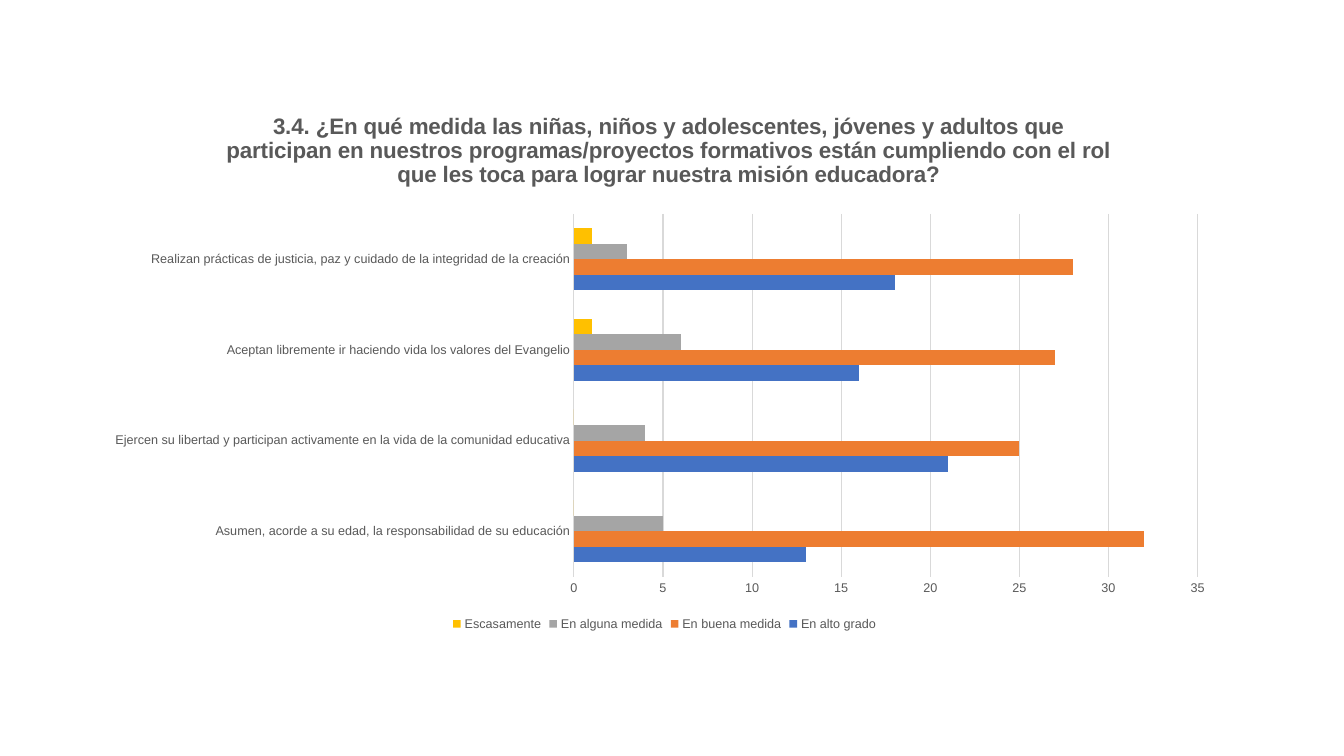
from dataclasses import dataclass

from lxml.etree import SubElement
from pptx import Presentation
from pptx.chart.chart import Chart
from pptx.chart.data import CategoryChartData
from pptx.dml.color import RGBColor
from pptx.enum.chart import XL_CHART_TYPE, XL_LEGEND_POSITION, XL_TICK_MARK
from pptx.oxml.ns import qn
from pptx.text.text import Font, TextFrame
from pptx.util import Cm, Pt

COLORS = {
    "text": "595959",
    "line": "D9D9D9",
    "blue": "4472C4",
    "orange": "ED7D31",
    "gray": "A5A5A5",
    "yellow": "FFC000",
}


@dataclass
class Answer:
    name: str
    values: tuple[int, ...]
    color: str


TITLE = (
    "3.4. ¿En qué medida las niñas, niños y adolescentes, jóvenes y adultos que "
    "participan en nuestros programas/proyectos formativos están cumpliendo con el rol "
    "que les toca para lograr nuestra misión educadora?"
)
CATEGORIES = [
    "Asumen, acorde a su edad, la responsabilidad de su educación",
    "Ejercen su libertad y participan activamente en la vida de la comunidad educativa",
    "Aceptan libremente ir haciendo vida los valores del Evangelio",
    "Realizan prácticas de justicia, paz y cuidado de la integridad de la creación",
]
ANSWERS = [
    Answer("En alto grado", (13, 21, 16, 18), "blue"),
    Answer("En buena medida", (32, 25, 27, 28), "orange"),
    Answer("En alguna medida", (5, 4, 6, 3), "gray"),
    Answer("Escasamente", (0, 0, 1, 1), "yellow"),
]


def rgb(name: str) -> RGBColor:
    return RGBColor.from_string(COLORS[name])


def format_font(font: Font, size: float = 9, bold: bool = False, color: str = "text") -> None:
    font.name = "Arial"
    font.size = Pt(size)
    font.bold = bold
    font.color.rgb = rgb(color)


def write_text(tf: TextFrame, text: str, **style) -> None:
    r = tf.paragraphs[0].add_run()
    r.text = text
    format_font(r.font, **style)


def set_layout(element, inner: bool = False, **fractions: float) -> None:
    """Place a chart part by fractions (x, y, w, h) of the chart's size."""
    layout = element.find(qn("c:layout"))
    if layout is None:
        layout = SubElement(element, qn("c:layout"))
        position = 1 if element.find(qn("c:tx")) is not None else 0
        element.insert(position, layout)
    for child in list(layout):
        layout.remove(child)
    manual = SubElement(layout, qn("c:manualLayout"))
    if inner:
        SubElement(manual, qn("c:layoutTarget")).set("val", "inner")
    for key in ("x", "y"):
        SubElement(manual, qn(f"c:{key}Mode")).set("val", "edge")
    for key, value in fractions.items():
        SubElement(manual, qn(f"c:{key}")).set("val", str(value))


def format_axes(chart: Chart) -> None:
    for axis in (chart.category_axis, chart.value_axis):
        axis.major_tick_mark = axis.minor_tick_mark = XL_TICK_MARK.NONE
        format_font(axis.tick_labels.font)
    chart.value_axis.minimum_scale = 0
    chart.value_axis.maximum_scale = 35
    chart.value_axis.major_unit = 5
    chart.value_axis.format.line.fill.background()
    for part in (chart.category_axis, chart.value_axis.major_gridlines):
        part.format.line.color.rgb = rgb("line")
        part.format.line.width = Pt(0.75)


def format_bars(chart: Chart) -> None:
    plot = chart.plots[0]
    plot.gap_width = 182
    plot.overlap = 0
    plot.vary_by_categories = False
    for series, answer in zip(plot.series, ANSWERS):
        series.invert_if_negative = False
        series.format.fill.solid()
        series.format.fill.fore_color.rgb = rgb(answer.color)


def main() -> None:
    prs = Presentation()
    prs.slide_width, prs.slide_height = Cm(33.87), Cm(19.05)
    slide = prs.slides.add_slide(prs.slide_layouts[6])

    data = CategoryChartData(number_format="General")
    data.categories = CATEGORIES
    for answer in ANSWERS:
        data.add_series(answer.name, answer.values)
    chart = slide.shapes.add_chart(
        XL_CHART_TYPE.BAR_CLUSTERED, Cm(2.46), Cm(2.57), Cm(28.58), Cm(13.44), data
    ).chart
    format_font(chart.font)

    write_text(chart.chart_title.text_frame, TITLE, size=16, bold=True)
    chart.chart_title.include_in_layout = False
    chart.has_legend = True
    chart.legend.position = XL_LEGEND_POSITION.BOTTOM
    chart.legend.include_in_layout = False
    format_font(chart.legend.font)
    format_axes(chart)
    format_bars(chart)

    c = chart.element.find(qn("c:chart"))
    set_layout(c.find(qn("c:title")), x=0.11, y=0.01)
    set_layout(c.find(qn("c:plotArea")), inner=True, x=0.42, y=0.21, w=0.55, h=0.68)
    prs.save("out.pptx")


if __name__ == "__main__":
    main()
